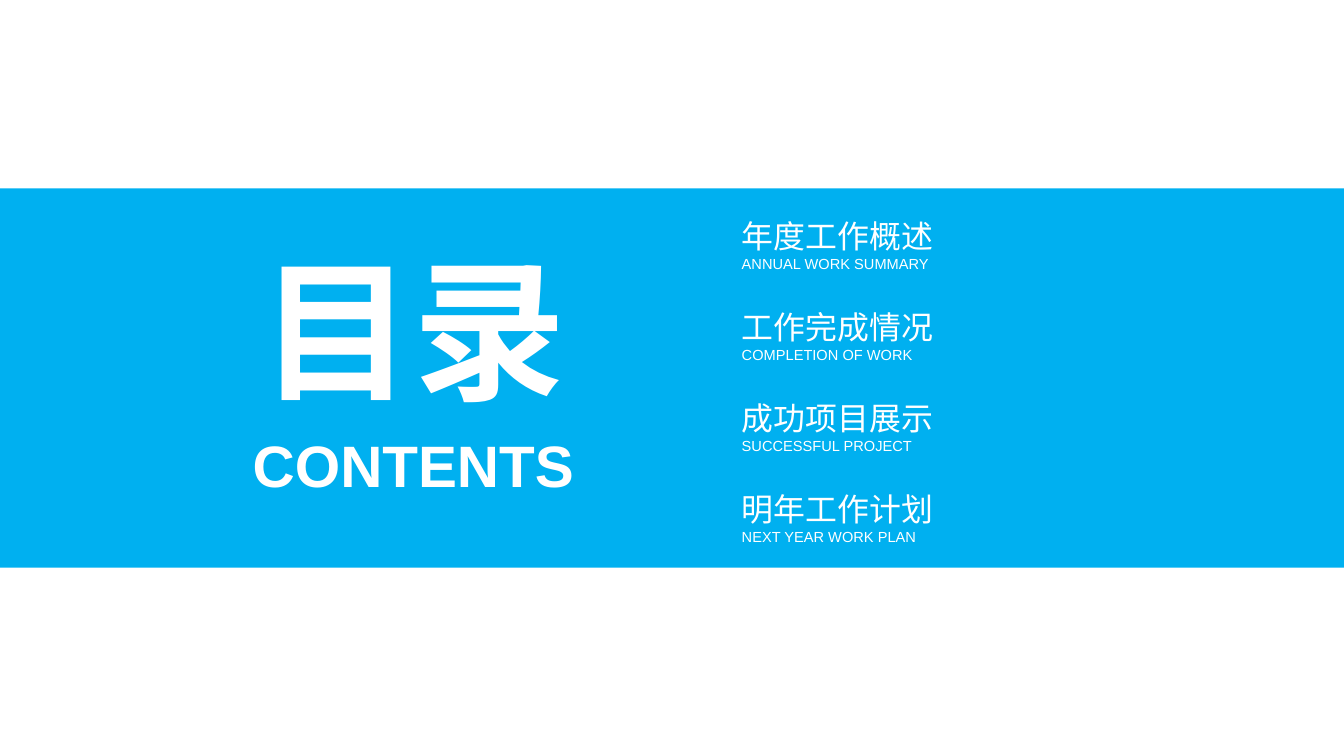
from dataclasses import dataclass

from pptx import Presentation
from pptx.dml.color import RGBColor
from pptx.enum.shapes import MSO_SHAPE as Preset
from pptx.enum.text import MSO_ANCHOR as Anchor, MSO_AUTO_SIZE as AutoSize, PP_ALIGN as Align
from pptx.util import Inches, Pt


@dataclass(frozen=True)
class Theme:
    font: str = "Arial"
    band: RGBColor = RGBColor(0x00, 0xB0, 0xF0)
    text: RGBColor = RGBColor(0xFF, 0xFF, 0xFF)
    title: int = 115
    subtitle: int = 44
    entry: int = 24
    caption: int = 11


THEME = Theme()
WIDTH, HEIGHT = 14.06, 7.91
ENTRIES = [
    ("年度工作概述", "ANNUAL WORK SUMMARY"),
    ("工作完成情况", "COMPLETION OF WORK"),
    ("成功项目展示", "SUCCESSFUL PROJECT"),
    ("明年工作计划", "NEXT YEAR WORK PLAN"),
]


def place(shape, left, top, width, height):
    shape.left, shape.top = Inches(left), Inches(top)
    shape.width, shape.height = Inches(width), Inches(height)


def write(shape, lines, align, anchor, bold=False):
    """Fill a shape with one paragraph per (text, size) pair."""
    frame = shape.text_frame
    frame.word_wrap = True
    frame.auto_size = AutoSize.NONE
    frame.vertical_anchor = anchor
    frame.margin_left = frame.margin_right = frame.margin_top = frame.margin_bottom = 0
    frame.text = "\n".join(text for text, _ in lines)
    for para, (_, size) in zip(frame.paragraphs, lines):
        para.alignment = align
        para.font.name = THEME.font
        para.font.size = Pt(size)
        para.font.bold = bold
        para.font.color.rgb = THEME.text


def add_band(page, left, top, width, height):
    band = page.shapes.add_shape(
        Preset.RECTANGLE, Inches(left), Inches(top), Inches(width), Inches(height))
    band.shadow.inherit = False
    band.fill.solid()
    band.fill.fore_color.rgb = THEME.band
    band.line.fill.background()
    # Keep the band behind the title
    page.shapes.title.element.addprevious(band.element)


def add_heading(page, left, top, width):
    title = page.shapes.title
    place(title, left + 0.12, top, width - 0.24, 1.94)
    write(title, [("目录", THEME.title)], Align.CENTER, Anchor.MIDDLE, bold=True)

    subtitle = page.shapes.add_textbox(
        Inches(left), Inches(top + 2.03), Inches(width), Inches(0.74))
    write(subtitle, [("CONTENTS", THEME.subtitle)], Align.CENTER, Anchor.TOP, bold=True)


def add_outline(page, left, top, width, height):
    """Add an unfilled freeform that frames the given box."""
    right, bottom = left + width, top + height
    builder = page.shapes.build_freeform(Inches(left), Inches(top))
    corners = [(right, top), (right, bottom), (left, bottom)]
    builder.add_line_segments([(Inches(x), Inches(y)) for x, y in corners], close=True)
    outline = builder.convert_to_shape()
    outline.shadow.inherit = False
    outline.fill.background()
    outline.line.fill.background()
    return outline


def add_entries(page, left, top, width, height):
    row_height = 0.59
    pitch = (height - row_height) / (len(ENTRIES) - 1)
    for row, (name, caption) in enumerate(ENTRIES):
        box = add_outline(page, left, top + row * pitch, width, row_height)
        write(box, [(name, THEME.entry), (caption, THEME.caption)], Align.LEFT, Anchor.MIDDLE)


def add_contents_page(deck):
    page = deck.slides.add_slide(deck.slide_layouts[5])
    band_top = 1.97
    add_band(page, 0, band_top, WIDTH, 3.97)
    add_heading(page, 2.52, band_top + 0.49, 3.61)
    add_entries(page, 7.76, band_top + 0.29, 2.7, 3.45)


def main():
    deck = Presentation()
    deck.slide_width, deck.slide_height = Inches(WIDTH), Inches(HEIGHT)
    add_contents_page(deck)
    deck.save("out.pptx")


if __name__ == "__main__":
    main()
